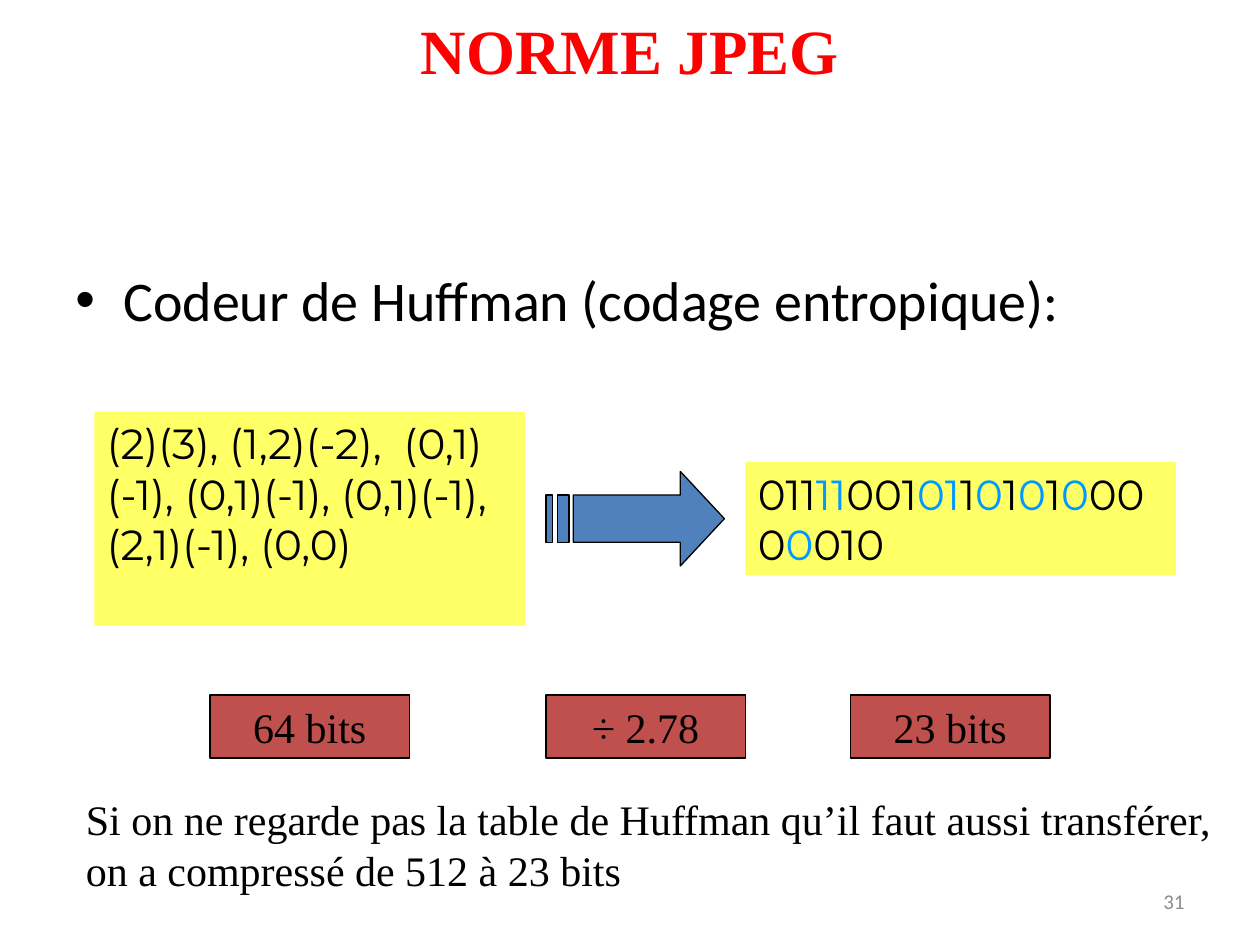
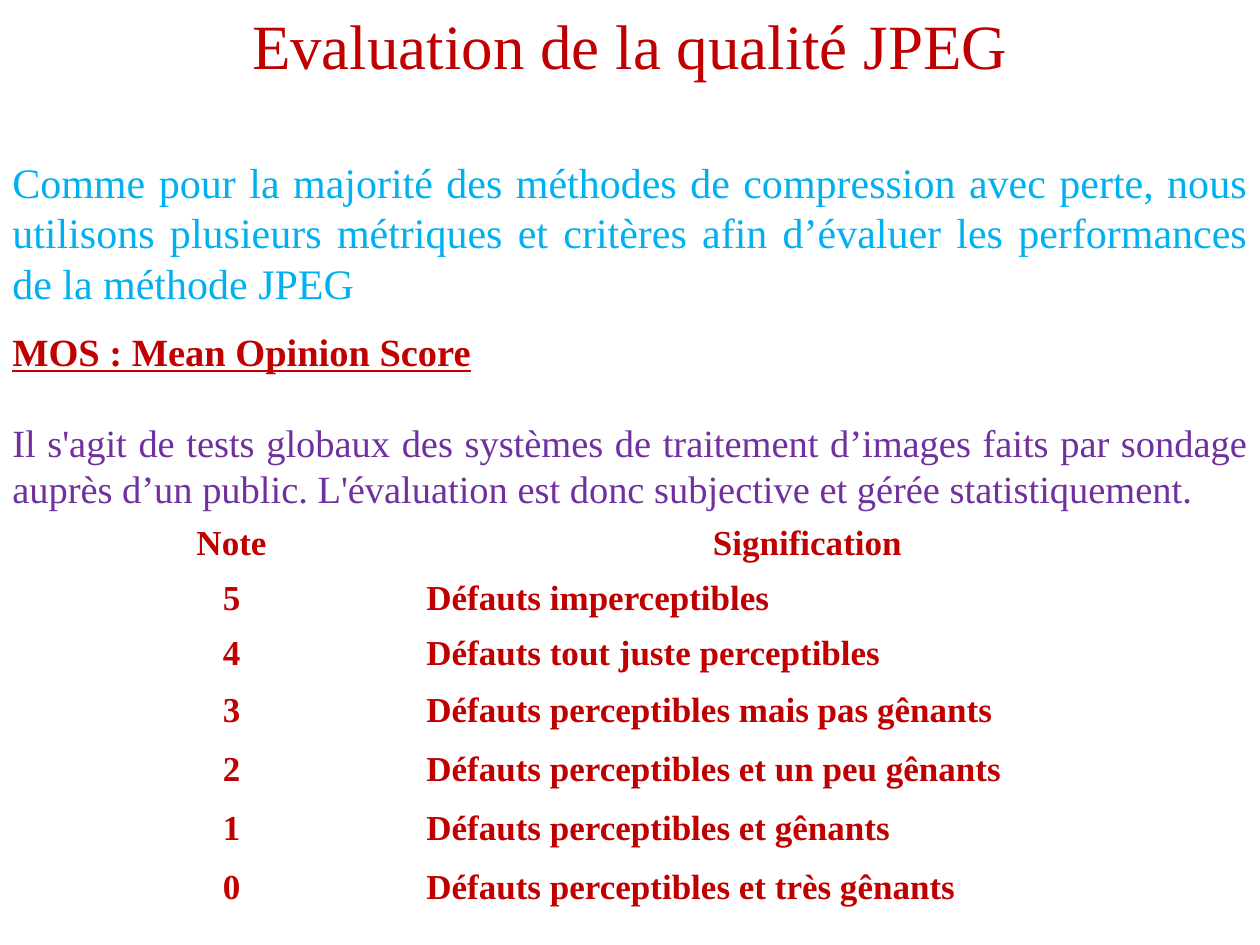
from lxml.etree import SubElement
from pptx import Presentation
from pptx.dml.color import RGBColor
from pptx.enum.shapes import MSO_SHAPE
from pptx.enum.text import MSO_ANCHOR, PP_ALIGN
from pptx.oxml.ns import qn
from pptx.util import Inches, Pt

BLACK = RGBColor(0x00, 0x00, 0x00)
RED = RGBColor(0xFF, 0x00, 0x00)
DARK_RED = RGBColor(0xC0, 0x00, 0x00)
YELLOW = RGBColor(0xFF, 0xFF, 0x66)
BRICK = RGBColor(0xC0, 0x50, 0x4D)
STEEL_BLUE = RGBColor(0x4F, 0x81, 0xBD)
BIT_BLUE = RGBColor(0x00, 0x99, 0xFF)
SKY_BLUE = RGBColor(0x00, 0xB0, 0xF0)
PURPLE = RGBColor(0x70, 0x30, 0xA0)
GRAY = RGBColor(0x8C, 0x8C, 0x8C)

SERIF, SANS, CODE = "Times New Roman", "Calibri", "Montserrat"

COLUMNS, ROWS = 120, 90
UNIT = Inches(10) / COLUMNS

HUFFMAN_TITLE = "NORME JPEG"
HUFFMAN_BULLET = "Codeur de Huffman (codage entropique):"
SYMBOLS = "(2)(3), (1,2)(-2),  (0,1)(-1), (0,1)(-1), (0,1)(-1), (2,1)(-1), (0,0)"
CODE_WORDS = ["011", "11", "001", "01", "1", "0", "1", "0", "1", "0", "000", "0", "010"]
BIT_COUNTS = [(20, "64 bits"), (52, "÷ 2.78"), (81, "23 bits")]
CONCLUSION = [
    "Si on ne regarde pas la table de Huffman qu’il faut aussi transférer,",
    "on a compressé de 512 à 23 bits",
]
PAGE_NUMBER = "31"

ARROW_LEFT, ARROW_TOP = 52, 44.9
ARROW_HEAD = [(12.8, 0), (12.8, 2.25), (2.6, 2.25), (2.6, 6.75), (12.8, 6.75), (12.8, 9), (17, 4.5)]
ARROW_STRIPES = [(1.1, 2.2), (0, 0.6)]

QUALITY_TITLE = "Evaluation de la qualité JPEG"
INTRODUCTION = (
    "Comme pour la majorité des méthodes de compression avec perte, nous utilisons "
    "plusieurs métriques et critères afin d’évaluer les performances de la méthode JPEG"
)
MOS_HEADING = "MOS : Mean Opinion Score"
MOS_TEXT = (
    "Il s'agit de tests globaux des systèmes de traitement d’images faits par sondage "
    "auprès d’un public. L'évaluation est donc subjective et gérée statistiquement."
)
SCORES = [
    ("Note", "Signification"),
    ("5", "Défauts imperceptibles"),
    ("4", "Défauts tout juste perceptibles"),
    ("3", "Défauts perceptibles mais pas gênants"),
    ("2", "Défauts perceptibles et un peu gênants"),
    ("1", "Défauts perceptibles et gênants"),
    ("0", "Défauts perceptibles et très gênants"),
]
SCORE_COLUMNS = [34.7, 75]
SCORE_ROWS = [5.15] * 3 + [5.65] * 4


def units(*lengths):
    return [round(length * UNIT) for length in lengths]


def format_runs(paragraph, size, color, font=SERIF, bold=False, align=PP_ALIGN.LEFT):
    paragraph.alignment = align
    for run in paragraph.runs:
        run.font.name = font
        run.font.size = Pt(size)
        run.font.bold = bold
        run.font.color.rgb = color


def add_text(slide, box, text, size, color, anchor=MSO_ANCHOR.TOP, wrap=True, **style):
    text_frame = slide.shapes.add_textbox(*units(*box)).text_frame
    text_frame.word_wrap = wrap
    text_frame.vertical_anchor = anchor
    text_frame.text = text
    for paragraph in text_frame.paragraphs:
        format_runs(paragraph, size, color, **style)
    return text_frame


def add_title(slide, text, height, color, bold=False):
    add_text(slide, (0, 0, COLUMNS, height), text, 36, color,
             MSO_ANCHOR.MIDDLE, bold=bold, align=PP_ALIGN.CENTER)


def paint(shape, fill, outlined):
    shape.shadow.inherit = False
    shape.fill.solid()
    shape.fill.fore_color.rgb = fill
    if outlined:
        shape.line.color.rgb = BLACK
        shape.line.width = Pt(0.75)
    else:
        shape.line.fill.background()


def add_box(slide, box, text, fill, font, outlined=False):
    shape = slide.shapes.add_shape(MSO_SHAPE.RECTANGLE, *units(*box))
    paint(shape, fill, outlined)
    text_frame = shape.text_frame
    text_frame.word_wrap = not outlined
    text_frame.vertical_anchor = MSO_ANCHOR.MIDDLE if outlined else MSO_ANCHOR.TOP
    text_frame.text = text
    align = PP_ALIGN.CENTER if outlined else PP_ALIGN.LEFT
    format_runs(text_frame.paragraphs[0], 24, BLACK, font, align=align)
    return text_frame.paragraphs[0]


def add_bullet(paragraph, indent):
    properties = paragraph._p.get_or_add_pPr()
    properties.set("marL", str(indent))
    properties.set("indent", str(-indent))
    SubElement(properties, qn("a:buFont"), typeface="Arial")
    SubElement(properties, qn("a:buChar"), char="•")


def add_striped_arrow(slide):
    stripes = [[(left, 2.25), (left, 6.75), (right, 6.75), (right, 2.25)]
               for left, right in ARROW_STRIPES]
    outlines = [[units(ARROW_LEFT + x, ARROW_TOP + y) for x, y in outline]
                for outline in [ARROW_HEAD] + stripes]
    builder = slide.shapes.build_freeform(*outlines[0][0])
    builder.add_line_segments(outlines[0][1:], close=True)
    for outline in outlines[1:]:
        builder.move_to(*outline[0])
        builder.add_line_segments(outline[1:], close=True)
    paint(builder.convert_to_shape(), STEEL_BLUE, outlined=True)


def add_score_table(slide):
    box = units(4.7, 49.2, sum(SCORE_COLUMNS), sum(SCORE_ROWS))
    table = slide.shapes.add_table(len(SCORES), len(SCORE_COLUMNS), *box).table
    table.first_row = table.horz_banding = False
    for column, width in zip(table.columns, units(*SCORE_COLUMNS)):
        column.width = width
    for row, height in zip(table.rows, units(*SCORE_ROWS)):
        row.height = height
    for row_index, row in enumerate(SCORES):
        for column_index, text in enumerate(row):
            cell = table.cell(row_index, column_index)
            cell.fill.background()
            cell.vertical_anchor = MSO_ANCHOR.MIDDLE
            cell.text_frame.text = text
            centred = row_index == 0 or column_index == 0
            format_runs(cell.text_frame.paragraphs[0], 20, DARK_RED, bold=True,
                        align=PP_ALIGN.CENTER if centred else PP_ALIGN.LEFT)


def build_huffman_slide(slide):
    bullet = add_text(slide, (6, 24.7, 110, 54.7), HUFFMAN_BULLET, 32, BLACK, font=SANS)
    add_bullet(bullet.paragraphs[0], Inches(0.38))
    add_text(slide, (86, 83.4, 28, 4.8), PAGE_NUMBER, 12, GRAY,
             MSO_ANCHOR.MIDDLE, font=SANS, align=PP_ALIGN.RIGHT)
    add_striped_arrow(slide)
    add_box(slide, (9, 39.2, 41, 20.4), SYMBOLS, YELLOW, CODE)
    for left, label in BIT_COUNTS:
        add_box(slide, (left, 66.2, 19, 6), label, BRICK, SERIF, outlined=True)
    code = add_box(slide, (71, 44, 41, 10.8), CODE_WORDS[0], YELLOW, CODE)
    for word in CODE_WORDS[1:]:
        code.add_run().text = word
    format_runs(code, 24, BLACK, CODE)
    for run in code.runs[1::2]:
        run.font.color.rgb = BIT_BLUE
    add_text(slide, (7, 75, 109.7, 10.8), "\n".join(CONCLUSION), 24, BLACK, wrap=False)
    add_title(slide, HUFFMAN_TITLE, 9.4, RED, bold=True)


def build_quality_slide(slide):
    mos = add_text(slide, (0, 30.7, COLUMNS, 19), MOS_HEADING, 22, DARK_RED, bold=True)
    mos.paragraphs[0].runs[0].font.underline = True
    explanation = mos.add_paragraph()
    explanation.text = MOS_TEXT
    explanation.space_before = Pt(25.3)
    format_runs(explanation, 22, PURPLE, align=PP_ALIGN.JUSTIFY)
    add_title(slide, QUALITY_TITLE, 8.5, DARK_RED)
    add_score_table(slide)
    add_text(slide, (0, 14.3, COLUMNS, 15.7), INTRODUCTION, 24, SKY_BLUE,
             align=PP_ALIGN.JUSTIFY)


def main():
    presentation = Presentation()
    presentation.slide_width, presentation.slide_height = units(COLUMNS, ROWS)
    blank = presentation.slide_layouts[6]
    for build in (build_huffman_slide, build_quality_slide):
        build(presentation.slides.add_slide(blank))
    presentation.save("out.pptx")


if __name__ == "__main__":
    main()
